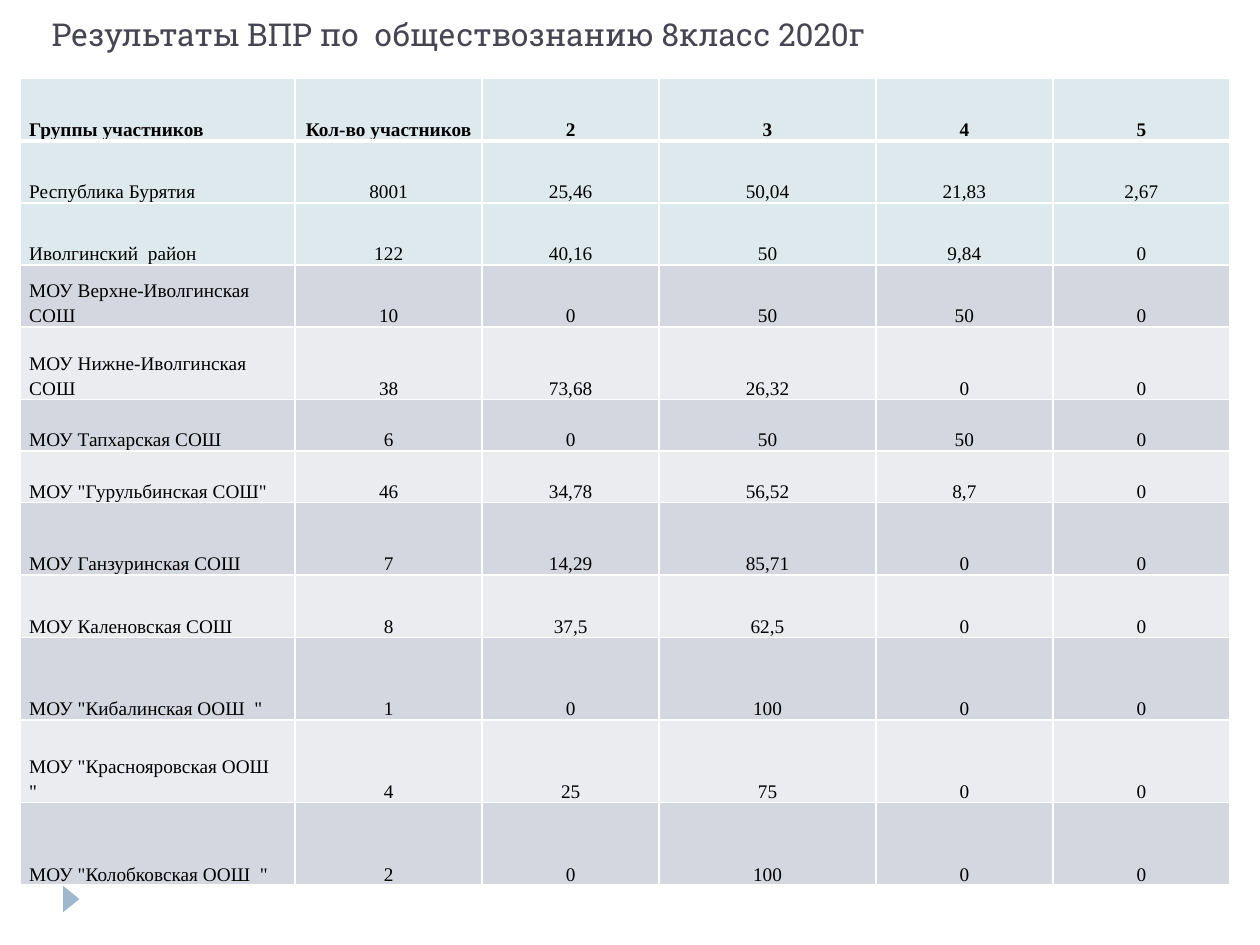
"""Build a slide with a table of social studies test results by school."""
from lxml.etree import SubElement
from pptx import Presentation
from pptx.dml.color import RGBColor as RGB
from pptx.enum.dml import MSO_LINE as DASH
from pptx.enum.shapes import MSO_CONNECTOR as CONNECTOR, MSO_SHAPE as SHAPE
from pptx.enum.text import MSO_ANCHOR as ANCHOR, PP_ALIGN as ALIGN
from pptx.oxml.ns import qn
from pptx.util import Inches, Pt

COLORS = {
    "title": "464653",
    "text": "000000",
    "accent": "9FB8CD",
    "border": "FFFFFF",
    "summary": "DDE9EC",
    "odd": "D5D7E0",
    "even": "EBECF0",
}
COLS = [21.86, 14.84, 14.05, 17.2, 14.05, 14.05]
ROWS = [6.65, 6.56, 6.56, 6.56, 7.67, 5.47, 5.47, 7.67, 6.58, 8.75, 8.75, 8.75]
RESULTS = [
    ["Группы участников", "Кол-во участников", "2", "3", "4", "5"],
    ["Республика Бурятия", "8001", "25,46", "50,04", "21,83", "2,67"],
    ["Иволгинский  район", "122", "40,16", "50", "9,84", "0"],
    ["МОУ Верхне-Иволгинская СОШ", "10", "0", "50", "50", "0"],
    ["МОУ Нижне-Иволгинская СОШ", "38", "73,68", "26,32", "0", "0"],
    ["МОУ Тапхарская СОШ", "6", "0", "50", "50", "0"],
    ['МОУ "Гурульбинская СОШ"', "46", "34,78", "56,52", "8,7", "0"],
    ["МОУ Ганзуринская СОШ", "7", "14,29", "85,71", "0", "0"],
    ["МОУ Каленовская СОШ", "8", "37,5", "62,5", "0", "0"],
    ['МОУ "Кибалинская ООШ  "', "1", "0", "100", "0", "0"],
    ['МОУ "Краснояровская ООШ  "', "4", "25", "75", "0", "0"],
    ['МОУ "Колобковская ООШ  "', "2", "0", "100", "0", "0"],
]

prs = Presentation()
prs.slide_width, prs.slide_height = Inches(10), Inches(7.5)
W, H = prs.slide_width / 100, prs.slide_height / 100
s = prs.slides.add_slide(prs.slide_layouts[5])


def box(x, y, w, h):
    return int(x * W), int(y * H), int(w * W), int(h * H)


def write(tf, text, font="Times New Roman", size=11, color="text",
          bold=False, align=ALIGN.LEFT, spacing=1.15):
    p = tf.paragraphs[0]
    p.alignment, p.line_spacing = align, spacing
    r = p.add_run()
    r.text = text
    r.font.name, r.font.size, r.font.bold = font, Pt(size), bold
    r.font.color.rgb = RGB.from_string(COLORS[color])


for y in (92.67, 16.67):
    rule = s.shapes.add_connector(CONNECTOR.STRAIGHT, *box(5, y, 95, y))
    rule.line.color.rgb = RGB.from_string(COLORS["accent"])
    rule.line.width, rule.line.dash_style = Pt(0.75), DASH.DASH
    SubElement(rule._element.spPr, qn("a:effectLst"))

marker = s.shapes.add_shape(SHAPE.ISOSCELES_TRIANGLE, *box(4.6, 94.27, 2.1, 1.73))
marker.rotation = 90
marker.shadow.inherit = False
marker.fill.solid()
marker.fill.fore_color.rgb = RGB.from_string(COLORS["accent"])
marker.line.fill.background()

title = s.shapes.title
title.left, title.top, title.width, title.height = box(3.1, 2.27, 93.8, 4)
title.text_frame.vertical_anchor = ANCHOR.BOTTOM
write(title.text_frame, "Результаты ВПР по  обществознанию 8класс 2020г",
      font="Roboto Slab", size=18, color="title", spacing=1)

table = s.shapes.add_table(len(ROWS), len(COLS),
                           *box(1.57, 8.27, sum(COLS), sum(ROWS))).table
for col, share in zip(table.columns, COLS):
    col.width = int(share * W)
for row, share in zip(table.rows, ROWS):
    row.height = int(share * H)

for i, values in enumerate(RESULTS):
    fill = "summary" if i < 3 else "odd" if i % 2 else "even"
    for j, value in enumerate(values):
        cell = table.cell(i, j)
        cell.vertical_anchor = ANCHOR.BOTTOM
        cell.margin_left = cell.margin_right = Pt(5.4)
        cell.margin_top = cell.margin_bottom = 0
        tc_pr = cell._tc.get_or_add_tcPr()
        for side in "LRTB":
            heavy = (i, side) in [(0, "B"), (1, "T")]
            ln = SubElement(tc_pr, qn(f"a:ln{side}"), w=str(Pt(3 if heavy else 1)))
            SubElement(SubElement(ln, qn("a:solidFill")), qn("a:srgbClr"),
                       val=COLORS["border"])
        cell.fill.solid()
        cell.fill.fore_color.rgb = RGB.from_string(COLORS[fill])
        write(cell.text_frame, value, bold=i == 0,
              align=ALIGN.CENTER if j else ALIGN.LEFT)

prs.save("out.pptx")
